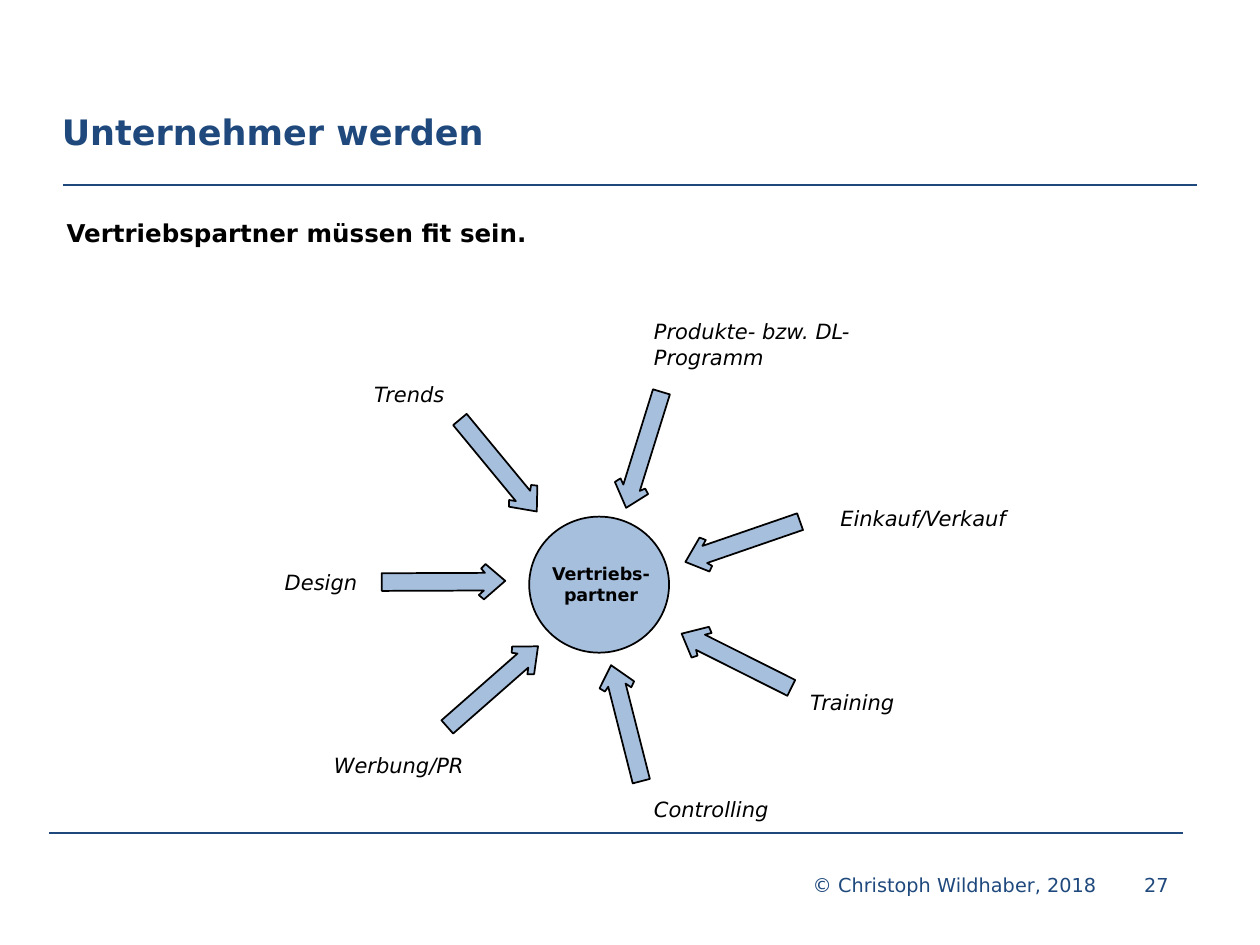
from dataclasses import dataclass
from math import hypot

from lxml import etree
from pptx import Presentation
from pptx.dml.color import RGBColor
from pptx.enum.shapes import MSO_CONNECTOR, MSO_SHAPE
from pptx.enum.text import MSO_ANCHOR, MSO_AUTO_SIZE, PP_ALIGN
from pptx.oxml.ns import qn
from pptx.util import Inches, Pt

LEFT, CENTER = PP_ALIGN.LEFT, PP_ALIGN.CENTER
TOP, MIDDLE = MSO_ANCHOR.TOP, MSO_ANCHOR.MIDDLE
FIXED = MSO_AUTO_SIZE.NONE
STRAIGHT = MSO_CONNECTOR.STRAIGHT
OVAL = MSO_SHAPE.OVAL

FONT = "DejaVu Sans"
COLORS = {"navy": "1F497D", "blue": "4F81BD", "black": "000000"}
HEAD = [(0, 0), (0.17, 0.145), (0.2, 0.12), (0.21, 0.11), (0.17, 0.075)]
BARB = [(0.16, -0.065), (0.19, -0.1), (0.17, -0.12), (0.155, -0.135)]
HALF = 0.07
WIDE, LINE = 1.97, 0.29
TIGHT = (0.09, 0.04)
LOOSE = (0.1, 0.05)


@dataclass
class Topic:
    text: str
    x: float
    y: float
    tail: tuple[float, float]
    tip: tuple[float, float]
    high: float = LINE


TOPICS = [
    Topic("Produkte- bzw. DL-Programm", 5.1, 2.49, (5.25, 3.11), (4.97, 4.03), 0.49),
    Topic("Einkauf/Verkauf", 6.58, 3.97, (6.35, 4.14), (5.44, 4.46)),
    Topic("Training", 6.34, 5.43, (6.28, 5.46), (5.41, 5.03)),
    Topic("Controlling", 5.1, 6.28, (5.09, 6.2), (4.85, 5.28)),
    Topic("Werbung/PR", 2.56, 5.93, (3.55, 5.77), (4.27, 5.13)),
    Topic("Design", 2.17, 4.48, (3.03, 4.62), (4.01, 4.61)),
    Topic("Trends", 2.88, 2.99, (3.65, 3.33), (4.26, 4.06)),
]


def tint(name: str) -> RGBColor:
    return RGBColor.from_string(COLORS[name])


def fill_text(shape, text: str, size: float, color: str = "black",
              align=LEFT, anchor=TOP, pad=LOOSE, **style) -> None:
    frame = shape.text_frame
    side, edge = (Inches(gap) for gap in pad)
    form = {"word_wrap": True, "auto_size": FIXED, "vertical_anchor": anchor,
            "margin_left": side, "margin_right": side,
            "margin_top": edge, "margin_bottom": edge}
    for key, value in form.items():
        setattr(frame, key, value)
    line = frame.paragraphs[0]
    line.text = text
    line.alignment = align
    look = {"name": FONT, "size": Pt(size), **style}
    for run in line.runs:
        for key, value in look.items():
            setattr(run.font, key, value)
        run.font.color.rgb = tint(color)


def add_text(slide, box: tuple, text: str, size: float, **style):
    shape = slide.shapes.add_textbox(*map(Inches, box))
    fill_text(shape, text, size, **style)
    return shape


def add_rule(slide, x: float, y: float, width: float) -> None:
    rule = slide.shapes.add_connector(
        STRAIGHT, Inches(x), Inches(y), Inches(x + 9), Inches(y))
    rule.line.color.rgb = tint("navy")
    rule.line.width = Pt(width)
    etree.SubElement(rule._element.spPr, qn("a:effectLst"))


def paint(shape) -> None:
    shape.shadow.inherit = False
    shape.fill.solid()
    shape.fill.fore_color.rgb = tint("blue")
    color = shape._element.spPr.find(qn("a:solidFill"))[0]
    etree.SubElement(color, qn("a:alpha"), val="50000")
    shape.line.color.rgb = tint("black")
    shape.line.width = Pt(1)


def add_arrow(slide, tail: tuple, tip: tuple) -> None:
    dx, dy = tail[0] - tip[0], tail[1] - tip[1]
    span = hypot(dx, dy)
    ux, uy = dx / span, dy / span
    shape = [*HEAD, (span, HALF), (span, -HALF), *BARB]
    spots = [(Inches(tip[0] + a * ux + b * uy), Inches(tip[1] + a * uy - b * ux))
             for a, b in shape]
    pen = slide.shapes.build_freeform(*spots[0])
    pen.add_line_segments(spots[1:], close=True)
    paint(pen.convert_to_shape())


def add_foot(slide) -> None:
    foot = add_text(slide, (6.22, 6.83, 3.28, 0.39),
                    "© Christoph Wildhaber, 2018\t27", 11,
                    color="navy", anchor=MIDDLE, pad=(0, 0.05))
    foot.text_frame.margin_left = Inches(0.23)
    props = foot.text_frame.paragraphs[0]._p.get_or_add_pPr()
    tabs = etree.SubElement(props, qn("a:tabLst"))
    etree.SubElement(tabs, qn("a:tab"), pos=str(Inches(2.63)), algn="l")


def set_title(slide, text: str) -> None:
    title = slide.shapes.title
    place = {"left": 0.39, "top": 0.83, "width": 9.11, "height": 0.64}
    for key, value in place.items():
        setattr(title, key, Inches(value))
    fill_text(title, text, 20, color="navy", bold=True)


def main() -> None:
    deck = Presentation()
    deck.slide_width, deck.slide_height = Inches(10), Inches(7.5)
    slide = deck.slides.add_slide(deck.slide_layouts[5])

    add_rule(slide, 0.39, 6.61, 1.5)
    add_foot(slide)
    add_rule(slide, 0.5, 1.47, 1.25)
    set_title(slide, "Unternehmer werden")
    add_text(slide, (0.43, 1.68, 9.5, 5), "Vertriebspartner müssen fit sein.",
             14, bold=True)

    hub = slide.shapes.add_shape(OVAL, *map(Inches, (4.2, 4.1, 1.11, 1.08)))
    paint(hub)
    add_text(slide, (4.26, 4.43, 1.02, 0.42), "Vertriebs-\vpartner", 10,
             align=CENTER, pad=TIGHT, bold=True)
    for topic in TOPICS:
        add_arrow(slide, topic.tail, topic.tip)
    for topic in TOPICS:
        add_text(slide, (topic.x, topic.y, WIDE, topic.high), topic.text, 12,
                 pad=TIGHT, italic=True)
    deck.save("out.pptx")


if __name__ == "__main__":
    main()
